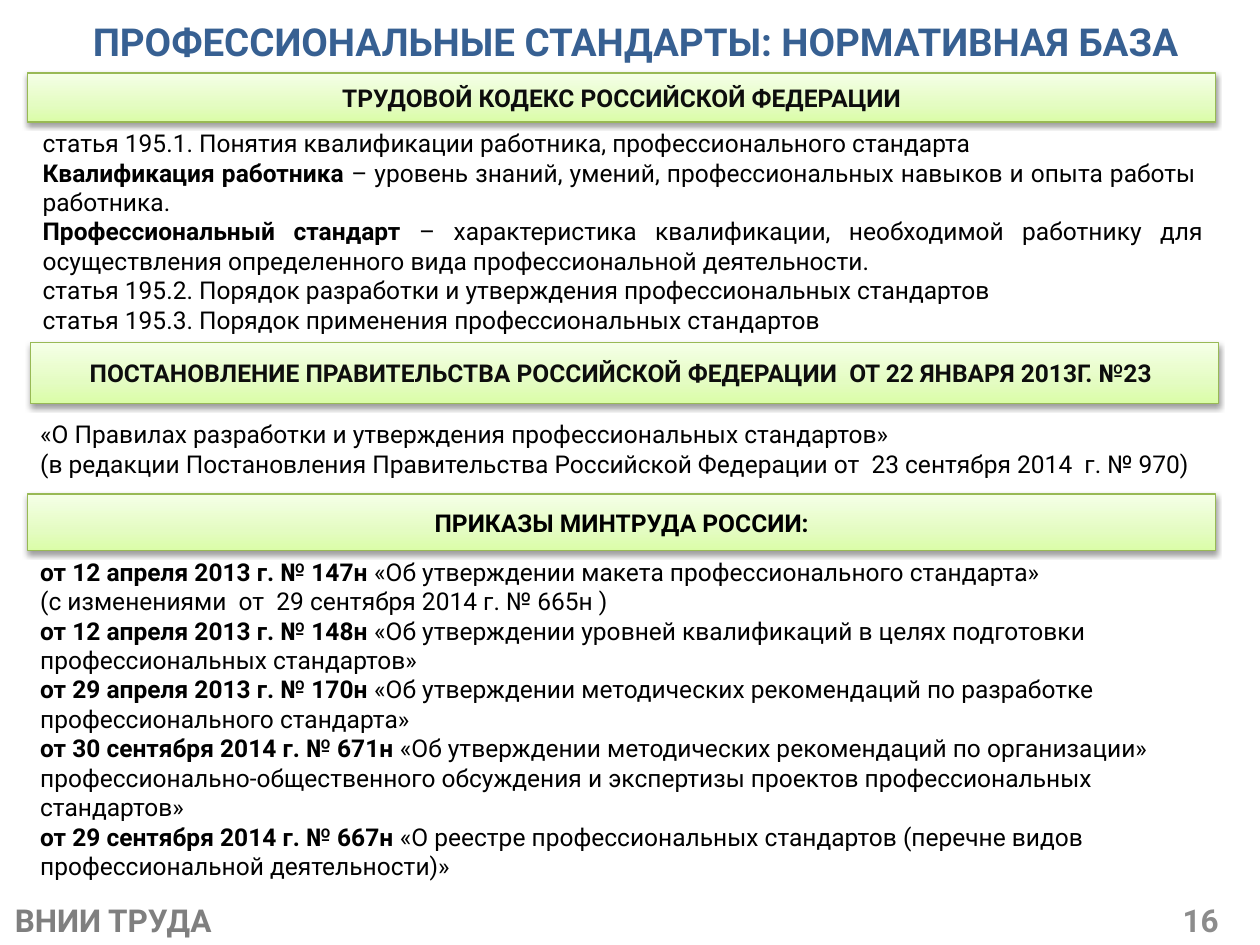
"""Build the slide on the legal basis of professional standards."""
from dataclasses import dataclass
from typing import Any

from lxml import etree
from pptx import Presentation
from pptx import util as u
from pptx.dml.color import RGBColor
from pptx.enum import shapes, text
from pptx.oxml.ns import qn

BLUE = RGBColor(0x37, 0x60, 0x92)
BLACK = RGBColor(0x00, 0x00, 0x00)
INK = RGBColor(0x0D, 0x0D, 0x0D)
GREY = RGBColor(0x7F, 0x7F, 0x7F)
PAGE_GREY = RGBColor(0x8C, 0x8C, 0x8C)
GREEN = RGBColor(0x98, 0xB9, 0x55)
BAND_STOPS = (
    (0, RGBColor(0xDA, 0xFD, 0xA7)),
    (35, RGBColor(0xE4, 0xFC, 0xC2)),
    (100, RGBColor(0xF5, 0xFF, 0xE7)),
)
SHADOW = {"blurRad": "40000", "dist": "20000", "dir": "5400000", "rotWithShape": "0"}

LEFT, CENTER = text.PP_ALIGN.LEFT, text.PP_ALIGN.CENTER
RIGHT, JUSTIFY = text.PP_ALIGN.RIGHT, text.PP_ALIGN.JUSTIFY
TOP, MIDDLE = text.MSO_ANCHOR.TOP, text.MSO_ANCHOR.MIDDLE
GROW, FIXED = text.MSO_AUTO_SIZE.SHAPE_TO_FIT_TEXT, text.MSO_AUTO_SIZE.NONE

BANDS = (
    ("ТРУДОВОЙ КОДЕКС РОССИЙСКОЙ ФЕДЕРАЦИИ", (0.56, 1.47, 23.95, 0.99), INK),
    ("ПОСТАНОВЛЕНИЕ ПРАВИТЕЛЬСТВА РОССИЙСКОЙ ФЕДЕРАЦИИ  ОТ 22 ЯНВАРЯ 2013Г. №23 ",
     (0.61, 6.91, 23.95, 1.22), INK),
    ("ПРИКАЗЫ МИНТРУДА РОССИИ:", (0.56, 9.96, 23.95, 1.14), BLACK),
)
LABOUR_CODE = (
    ("", "статья 195.1. Понятия квалификации работника, профессионального стандарта"),
    ("Квалификация работника ",
     "– уровень знаний, умений, профессиональных навыков и опыта работы  работника."),
    ("Профессиональный стандарт ",
     "– характеристика квалификации, необходимой работнику для осуществления "
     "определенного вида профессиональной деятельности."),
    ("", "статья 195.2. Порядок разработки и утверждения профессиональных стандартов"),
    ("", "статья 195.3. Порядок применения профессиональных стандартов "),
)
DECREE = (
    ("", "«О Правилах разработки и утверждения профессиональных стандартов»"),
    ("", "(в редакции Постановления Правительства Российской Федерации "
         "от  23 сентября 2014  г. № 970)"),
)
ORDERS = (
    ("от 12 апреля 2013 г. № 147н ",
     "«Об утверждении макета профессионального стандарта»"),
    ("", "(с изменениями  от  29 сентября 2014 г. № 665н )"),
    ("от 12 апреля 2013 г. № 148н ",
     "«Об утверждении уровней квалификаций в целях подготовки "
     "профессиональных стандартов»"),
    ("от 29 апреля 2013 г. № 170н ",
     "«Об утверждении методических рекомендаций по разработке "
     "профессионального стандарта»"),
    ("от 30 сентября 2014 г. № 671н ",
     "«Об утверждении методических рекомендаций по организации» "
     "профессионально-общественного обсуждения и экспертизы проектов "
     "профессиональных стандартов»"),
    ("от 29 сентября 2014 г. № 667н ",
     "«О реестре профессиональных стандартов (перечне видов "
     "профессиональной деятельности)»"),
)


def apply(target, values):
    for name, value in values.items():
        setattr(target, name, value)


@dataclass
class Page:
    slide: Any
    face: str = "Roboto"
    body_size: int = 14

    def typeset(self, frame, paragraphs, align, size, color):
        for index, parts in enumerate(paragraphs):
            line = frame.paragraphs[0] if index == 0 else frame.add_paragraph()
            line.alignment = align
            for wording, bold in zip(parts, (True, False)):
                if wording:
                    run = line.add_run()
                    run.text = wording
                    apply(run.font, {"name": self.face, "size": u.Pt(size), "bold": bold})
                    run.font.color.rgb = color

    def prose(self, box, paragraphs, align=LEFT, size=None, color=BLACK,
              anchor=TOP, fit=GROW):
        frame = self.slide.shapes.add_textbox(*map(u.Cm, box)).text_frame
        apply(frame, {"word_wrap": True, "auto_size": fit, "vertical_anchor": anchor})
        self.typeset(frame, paragraphs, align, size or self.body_size, color)

    def band(self, heading, box, color):
        bar = self.slide.shapes.add_shape(shapes.MSO_SHAPE.RECTANGLE, *map(u.Cm, box))
        bar.fill.gradient()
        bar.fill.gradient_angle = 90
        properties = bar._element.spPr
        stops = properties.find(qn("a:gradFill")).find(qn("a:gsLst"))
        for stop in list(stops):
            stops.remove(stop)
        for percent, tint in BAND_STOPS:
            stop = etree.SubElement(stops, qn("a:gs"), pos=str(percent * 1000))
            etree.SubElement(stop, qn("a:srgbClr"), val=str(tint))
        bar.line.color.rgb = GREEN
        bar.line.width = u.Pt(0.75)
        bar.shadow.inherit = False
        effects = properties.find(qn("a:effectLst"))
        shade = etree.SubElement(effects, qn("a:outerShdw"), SHADOW)
        shade_color = etree.SubElement(shade, qn("a:srgbClr"), val=str(BLACK))
        etree.SubElement(shade_color, qn("a:alpha"), val="38000")
        apply(bar.text_frame, {"word_wrap": True, "vertical_anchor": MIDDLE})
        self.typeset(bar.text_frame, [(heading,)], CENTER, self.body_size, color)


def main():
    deck = Presentation()
    apply(deck, {"slide_width": u.Cm(25.4), "slide_height": u.Cm(19.05)})
    page = Page(deck.slides.add_slide(deck.slide_layouts[6]))
    page.prose((0.51, 0.23, 24.61, 1.19),
               [("ПРОФЕССИОНАЛЬНЫЕ СТАНДАРТЫ: НОРМАТИВНАЯ БАЗА",)],
               CENTER, 22, BLUE, MIDDLE, FIXED)
    for band in BANDS:
        page.band(*band)
    page.prose((0.61, 2.46, 23.9, 5.05), LABOUR_CODE, JUSTIFY)
    page.prose((0.56, 8.33, 24.03, 2.06), DECREE)
    page.prose((0.56, 11.1, 23.95, 7.44), ORDERS)
    page.prose((18.9, 18.03, 5.92, 1.02), [("16",)], RIGHT, 18, PAGE_GREY, MIDDLE, FIXED)
    page.prose((0.05, 18.03, 5.99, 1.02), [("ВНИИ ТРУДА",)], LEFT, 18, GREY)
    deck.save("out.pptx")


if __name__ == "__main__":
    main()
